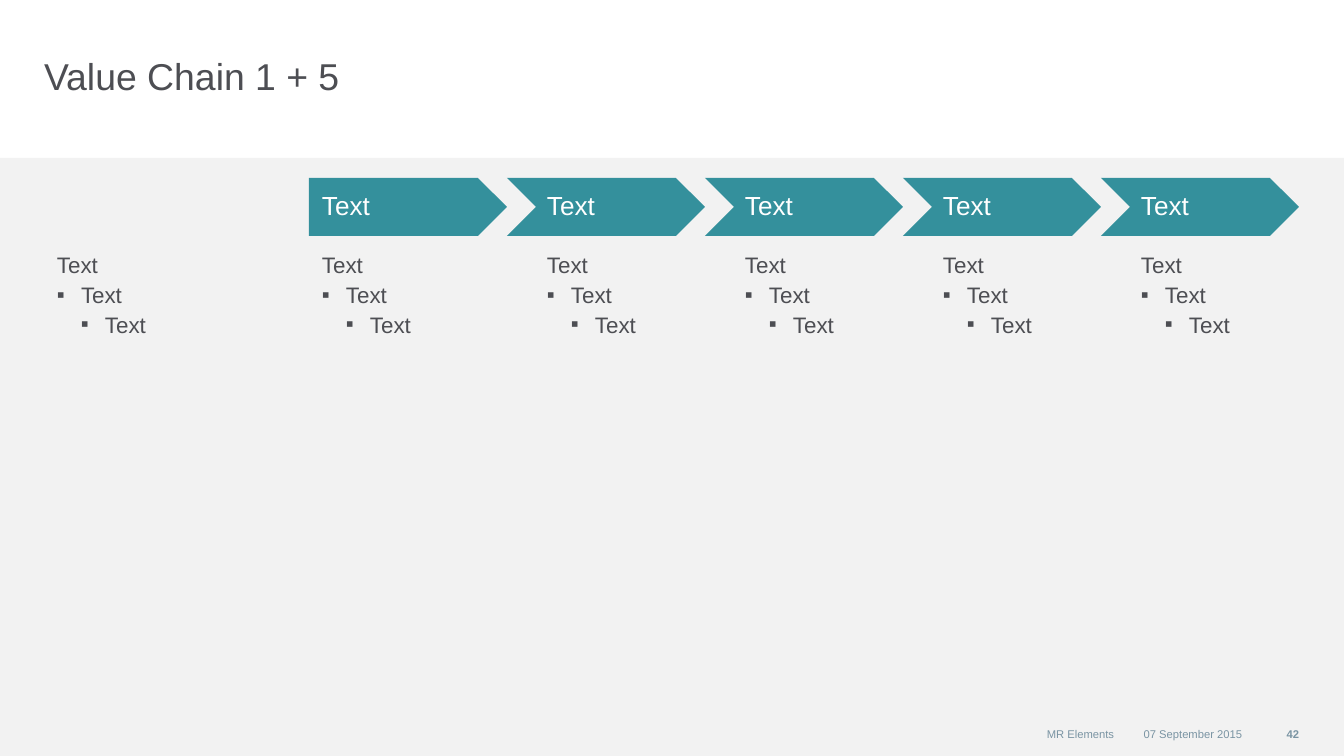
"""Builds the value chain slide: five arrow steps with a text column under each and one before them."""
from lxml import etree
from pptx import Presentation
from pptx.dml.color import RGBColor
from pptx.enum.shapes import MSO_SHAPE
from pptx.enum.text import MSO_ANCHOR, PP_ALIGN
from pptx.oxml.ns import qn
from pptx.util import Pt

RECTANGLE = MSO_SHAPE.RECTANGLE
TOP, MIDDLE = MSO_ANCHOR.TOP, MSO_ANCHOR.MIDDLE
LEFT, RIGHT = PP_ALIGN.LEFT, PP_ALIGN.RIGHT
SCALE = 914400 / 134.4
GREY, TEAL, WHITE, PALE, BLUE = "4D4E53", "34909C", "FFFFFF", "F2F2F2", "7A94A3"


def px(length):
    return round(length * SCALE)


def write(shape, lines, size, color, insets=(0, 0, 0, 0), anchor=TOP, align=LEFT, spacing=1.0, bold=False):
    frame = shape.text_frame
    frame.word_wrap = True
    frame.vertical_anchor = anchor
    frame.margin_left, frame.margin_top, frame.margin_right, frame.margin_bottom = map(px, insets)
    for level, line in enumerate(lines):
        para = frame.paragraphs[0] if level == 0 else frame.add_paragraph()
        para.text = line
        para.alignment = align
        para.line_spacing = spacing
        if level:
            para.level = 1
            properties = para._p.get_or_add_pPr()
            properties.set("marL", str(px(24 * level)))
            properties.set("indent", str(px(-24)))
            bullet_color = etree.SubElement(properties, qn("a:buClr"))
            etree.SubElement(bullet_color, qn("a:srgbClr"), val=color)
            etree.SubElement(properties, qn("a:buFont"), typeface="Arial")
            etree.SubElement(properties, qn("a:buChar"), char="▪")
        para.font.name = "Arial"
        para.font.size = Pt(size)
        para.font.bold = bold
        para.font.color.rgb = RGBColor.from_string(color)


deck = Presentation()
deck.slide_width, deck.slide_height = px(1344), px(756)
page = deck.slides.add_slide(deck.slide_layouts[6])

panel = page.shapes.add_shape(RECTANGLE, 0, px(158), px(1344), px(598))
panel.shadow.inherit = False
panel.fill.solid()
panel.fill.fore_color.rgb = RGBColor.from_string(PALE)
panel.line.fill.background()

title = page.shapes.add_textbox(px(44), px(53), px(1005), px(82))
write(title, ["Value Chain 1 + 5"], 20, GREY)

first_step, step_width, step_top, step_height, tip = 309, 198, 178, 58, 29
column_top = step_top + step_height
columns = [(44, 265, 13, 13)]

for step in range(5):
    left = first_step + step * step_width
    right = left + step_width
    inset = 40 if step else 13
    columns.append((left, step_width, inset, 0))
    outline = [(right - tip, step_top), (right, step_top + tip), (right - tip, column_top), (left, column_top)]
    if step:
        outline.append((left + tip, step_top + tip))
    builder = page.shapes.build_freeform(left, step_top, scale=SCALE)
    builder.add_line_segments(outline, close=True)
    arrow = builder.convert_to_shape()
    arrow.shadow.inherit = False
    arrow.fill.solid()
    arrow.fill.fore_color.rgb = RGBColor.from_string(TEAL)
    arrow.line.fill.background()
    write(arrow, ["Text"], 14, WHITE, (inset, 0, 0, 0), MIDDLE, spacing=0.9)

for left, width, inset_left, inset_right in columns:
    column = page.shapes.add_textbox(px(left), px(column_top), px(width), px(476))
    write(column, ["Text"] * 3, 12, GREY, (inset_left, 13, inset_right, 13), spacing=1.1)

for label, left, width, bold in [
    ("MR Elements", 585, 529, False),
    ("07 September 2015", 1120, 122, False),
    ("42", 1242, 57, True),
]:
    footer = page.shapes.add_textbox(px(left), px(719), px(width), px(30))
    write(footer, [label], 6, BLUE, anchor=MIDDLE, align=RIGHT, bold=bold)

deck.save("out.pptx")
